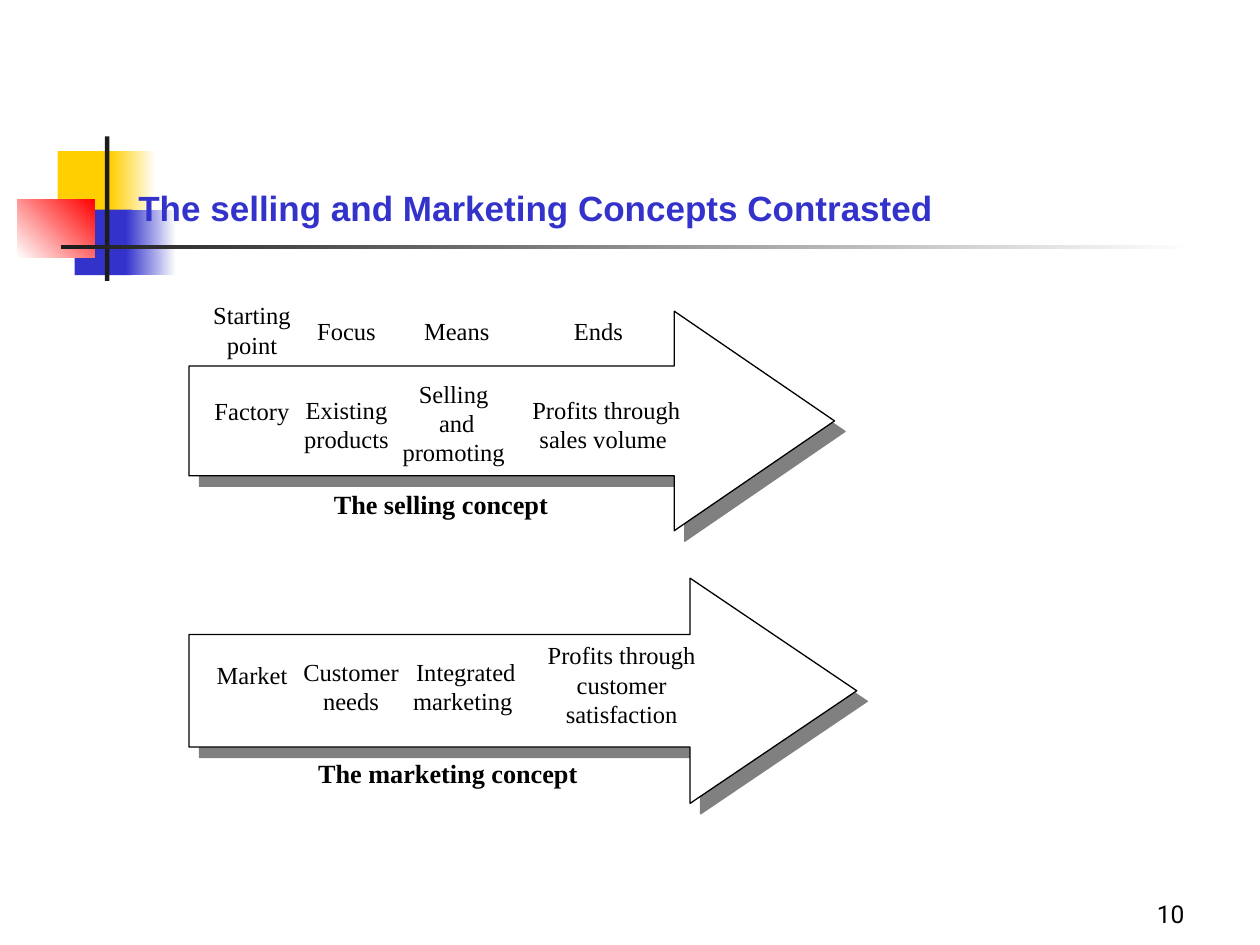
from dataclasses import dataclass

from lxml import etree
from pptx import Presentation
from pptx.dml.color import RGBColor
from pptx.enum.shapes import MSO_SHAPE
from pptx.enum.text import MSO_ANCHOR, PP_ALIGN
from pptx.oxml.ns import qn
from pptx.util import Pt

RECTANGLE, RIGHT_ARROW = MSO_SHAPE.RECTANGLE, MSO_SHAPE.RIGHT_ARROW
LEFT, CENTER, RIGHT = PP_ALIGN.LEFT, PP_ALIGN.CENTER, PP_ALIGN.RIGHT
TOP, BOTTOM = MSO_ANCHOR.TOP, MSO_ANCHOR.BOTTOM

COLORS = {
    "yellow": "FFCF01", "blue": "3333CC", "red": "FF0000", "dark": "1C1C1C",
    "white": "FFFFFF", "black": "000000", "shadow": "808080",
}
SERIF = "Times New Roman"


@dataclass
class Block:
    """A decorative rectangle; with a second colour it is a gradient."""
    left: float
    top: float
    width: float
    height: float
    color: str
    fade_to: str = ""
    angle: float = 0


@dataclass
class Label:
    text: str
    left: float
    top: float
    width: float
    height: float = 54
    size: float = 14
    bold: bool = False
    font: str = SERIF
    color: str = "black"
    align: PP_ALIGN = CENTER
    anchor: MSO_ANCHOR = TOP


@dataclass
class Concept:
    """A process arrow with the labels that belong to it."""
    top: float
    width: float
    height: float
    head: float
    labels: list[Label]


def rgb(name: str) -> RGBColor:
    return RGBColor.from_string(COLORS[name])


def add_block(shapes, block: Block) -> None:
    shape = shapes.add_shape(RECTANGLE, Pt(block.left), Pt(block.top),
                             Pt(block.width), Pt(block.height))
    shape.shadow.inherit = False
    shape.line.fill.background()
    if block.fade_to:
        shape.fill.gradient()
        shape.fill.gradient_angle = block.angle
        for stop, color in zip(shape.fill.gradient_stops, (block.color, block.fade_to)):
            stop.color.rgb = rgb(color)
    else:
        shape.fill.solid()
        shape.fill.fore_color.rgb = rgb(block.color)


def add_label(shapes, label: Label) -> None:
    box = shapes.add_textbox(Pt(label.left), Pt(label.top), Pt(label.width), Pt(label.height))
    frame = box.text_frame
    frame.word_wrap = True
    frame.vertical_anchor = label.anchor
    for number, line in enumerate(label.text.split("\n")):
        paragraph = frame.add_paragraph() if number else frame.paragraphs[0]
        paragraph.alignment = label.align
        run = paragraph.add_run()
        run.text = line
        run.font.name = label.font
        run.font.size = Pt(label.size)
        run.font.bold = label.bold
        run.font.color.rgb = rgb(label.color)


def add_hard_shadow(shape) -> None:
    shape.shadow.inherit = False
    effects = shape.element.spPr.find(qn("a:effectLst"))
    shadow = etree.SubElement(effects, qn("a:outerShdw"), blurRad="0", dist=str(Pt(8.5)),
                              dir=str(45 * 60000), algn="ctr", rotWithShape="0")
    etree.SubElement(shadow, qn("a:srgbClr"), val=COLORS["shadow"])


def add_concept(shapes, concept: Concept) -> None:
    group = shapes.add_group_shape().shapes
    arrow = group.add_shape(RIGHT_ARROW, Pt(108), Pt(concept.top),
                            Pt(concept.width), Pt(concept.height))
    arrow.adjustments[1] = concept.head
    arrow.fill.solid()
    arrow.fill.fore_color.rgb = rgb("white")
    arrow.line.color.rgb = rgb("black")
    arrow.line.width = Pt(0.75)
    add_hard_shadow(arrow)
    for label in concept.labels:
        add_label(group, label)


# Corner squares and the crossing rules
BLOCKS = [
    Block(33, 86.4, 34.7, 37.4, "yellow"),
    Block(63, 86.4, 26, 37.4, "yellow", "white"),
    Block(42.6, 119.8, 33, 37.4, "blue"),
    Block(72, 119.8, 28.8, 37.4, "blue", "white"),
    Block(9.8, 113.8, 44.4, 33.4, "white", "red", 45),
    Block(60, 78, 2.5, 82.6, "dark"),
    Block(34.8, 140, 648, 2.5, "dark", "white"),
]

SELLING = Concept(177.8, 368.9, 125.5, 0.73, [
    # Column headings
    Label("Starting point", 99, 168, 90),
    Label("Focus", 153, 176.8, 90),
    Label("Means", 216, 176.8, 90),
    Label("Ends", 297, 176.8, 90),
    # Steps
    Label("Factory", 99, 222.5, 90),
    Label("Existing products", 153, 222, 90),
    Label("Selling \nand promoting ", 216, 212.8, 90),
    Label("Profits through sales volume ", 288, 222, 117),
    Label("The selling concept", 162, 275.3, 180, size=15, bold=True),
])

MARKETING = Concept(330.4, 381.6, 128.7, 0.74, [
    Label("Market", 96, 373.7, 96),
    Label("Customer needs", 152.6, 371.8, 96),
    Label("Integrated marketing ", 218.2, 371.8, 96),
    Label("Profits through customer satisfaction", 293, 362.4, 124.6),
    Label("The marketing concept", 162.7, 429.4, 186.5, size=15, bold=True),
])

PAGE_NUMBER = Label("10", 534, 498, 150, 36, font="Roboto", align=RIGHT, anchor=BOTTOM)
TITLE = Label("The selling and Marketing Concepts Contrasted", 72, 103, 540, 30,
              size=20, bold=True, font="Arial", color="blue", align=LEFT)


def main() -> None:
    deck = Presentation()
    deck.slide_width, deck.slide_height = Pt(720), Pt(540)
    shapes = deck.slides.add_slide(deck.slide_layouts[6]).shapes

    for block in BLOCKS:
        add_block(shapes, block)
    add_label(shapes, PAGE_NUMBER)
    for concept in (SELLING, MARKETING):
        add_concept(shapes, concept)
    add_label(shapes, TITLE)

    deck.save("out.pptx")


if __name__ == "__main__":
    main()
